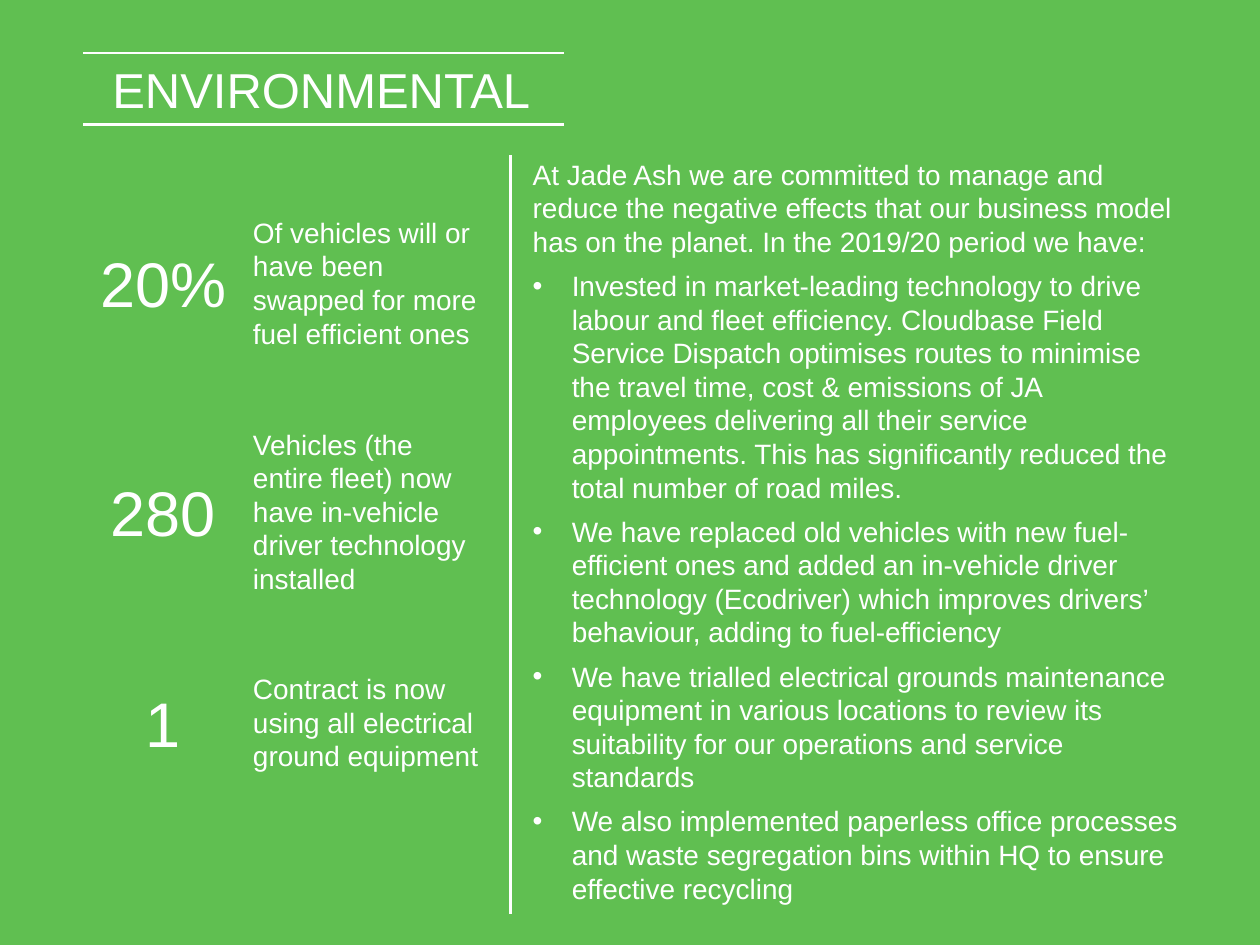
from dataclasses import dataclass

from lxml import etree
from pptx import Presentation
from pptx.dml.color import RGBColor
from pptx.enum import shapes, text
from pptx.oxml.ns import qn
from pptx.util import Inches, Pt


@dataclass(frozen=True)
class Theme:
    green: RGBColor = RGBColor(0x60, 0xBF, 0x51)
    white: RGBColor = RGBColor(0xFF, 0xFF, 0xFF)
    font: str = "Arial"
    title: int = 28
    figure: int = 36
    body: int = 16
    rule: float = 1.5


THEME = Theme()

STATS = [
    ("20%", "Of vehicles will or have been swapped for more fuel efficient ones", 1.66, 1.18),
    ("280", "Vehicles (the entire fleet) now have in-vehicle driver technology installed", 3.34, 1.45),
    ("1", "Contract is now using all electrical ground equipment", 5.28, 0.91),
]

INTRO = (
    "At Jade Ash we are committed to manage and reduce the negative effects that "
    "our business model has on the planet. In the 2019/20 period we have:"
)
ACTIONS = [
    "Invested in market-leading technology to drive labour and fleet efficiency. "
    "Cloudbase Field Service Dispatch optimises routes to minimise the travel time, "
    "cost & emissions of JA employees delivering all their service appointments. "
    "This has significantly reduced the total number of road miles.",
    "We have replaced old vehicles with new fuel-efficient ones and added an "
    "in-vehicle driver technology (Ecodriver) which improves drivers’ behaviour, "
    "adding to fuel-efficiency",
    "We have trialled electrical grounds maintenance equipment in various locations "
    "to review its suitability for our operations and service standards",
    "We also implemented paperless office processes and waste segregation bins "
    "within HQ to ensure effective recycling",
]


def add_bullet(p, indent=0.31):
    pPr = p._p.get_or_add_pPr()
    pPr.set("marL", str(Inches(indent)))
    pPr.set("indent", str(-Inches(indent)))
    etree.SubElement(pPr, qn("a:buFont")).set("typeface", THEME.font)
    etree.SubElement(pPr, qn("a:buChar")).set("char", "•")


def add_text(s, box, paragraphs, size=THEME.body, align=text.PP_ALIGN.LEFT,
             space_after=0, bullets_from=None):
    tf = s.shapes.add_textbox(*map(Inches, box)).text_frame
    tf.word_wrap = True
    tf.auto_size = text.MSO_AUTO_SIZE.SHAPE_TO_FIT_TEXT
    for i, content in enumerate(paragraphs):
        p = tf.add_paragraph() if i else tf.paragraphs[0]
        p.alignment = align
        p.space_after = Pt(space_after)
        if bullets_from is not None and i >= bullets_from:
            add_bullet(p)
        r = p.add_run()
        r.text = content
        r.font.name = THEME.font
        r.font.size = Pt(size)
        r.font.color.rgb = THEME.white


def add_rule(s, x1, y1, x2, y2):
    line = s.shapes.add_connector(
        shapes.MSO_CONNECTOR.STRAIGHT, *map(Inches, (x1, y1, x2, y2)))
    line.line.color.rgb = THEME.white
    line.line.width = Pt(THEME.rule)
    etree.SubElement(line._element.spPr, qn("a:effectLst"))


def add_title(s, box, title):
    x, y, w, h = box
    for rule_y in (y, y + h):
        add_rule(s, x, rule_y, x + w, rule_y)
    add_text(s, (x + 0.07, y, w - 0.18, h), [title], THEME.title, text.PP_ALIGN.CENTER)


def add_stat(s, box, figure, caption):
    x, y, w, h = box
    figure_w, figure_h, caption_x = 1.43, 0.71, 1.33
    add_text(s, (x, y + (h - figure_h) / 2, figure_w, figure_h), [figure],
             THEME.figure, text.PP_ALIGN.CENTER)
    add_text(s, (x + caption_x, y, w - caption_x, h), [caption])


def add_commitments(s, box):
    add_text(s, box, [INTRO, *ACTIONS], space_after=6, bullets_from=1)


def main():
    prs = Presentation()
    prs.slide_width, prs.slide_height = Inches(10), Inches(7.5)
    s = prs.slides.add_slide(prs.slide_layouts[6])
    s.background.fill.solid()
    s.background.fill.fore_color.rgb = THEME.green

    add_commitments(s, (4.13, 1.2, 5.36, 6.09))
    add_title(s, (0.66, 0.42, 3.82, 0.57), "ENVIRONMENTAL")
    for figure, caption, y, h in STATS:
        add_stat(s, (0.58, y, 3.39, h), figure, caption)
    add_rule(s, 4.05, 1.23, 4.05, 7.25)
    prs.save("out.pptx")


if __name__ == "__main__":
    main()
